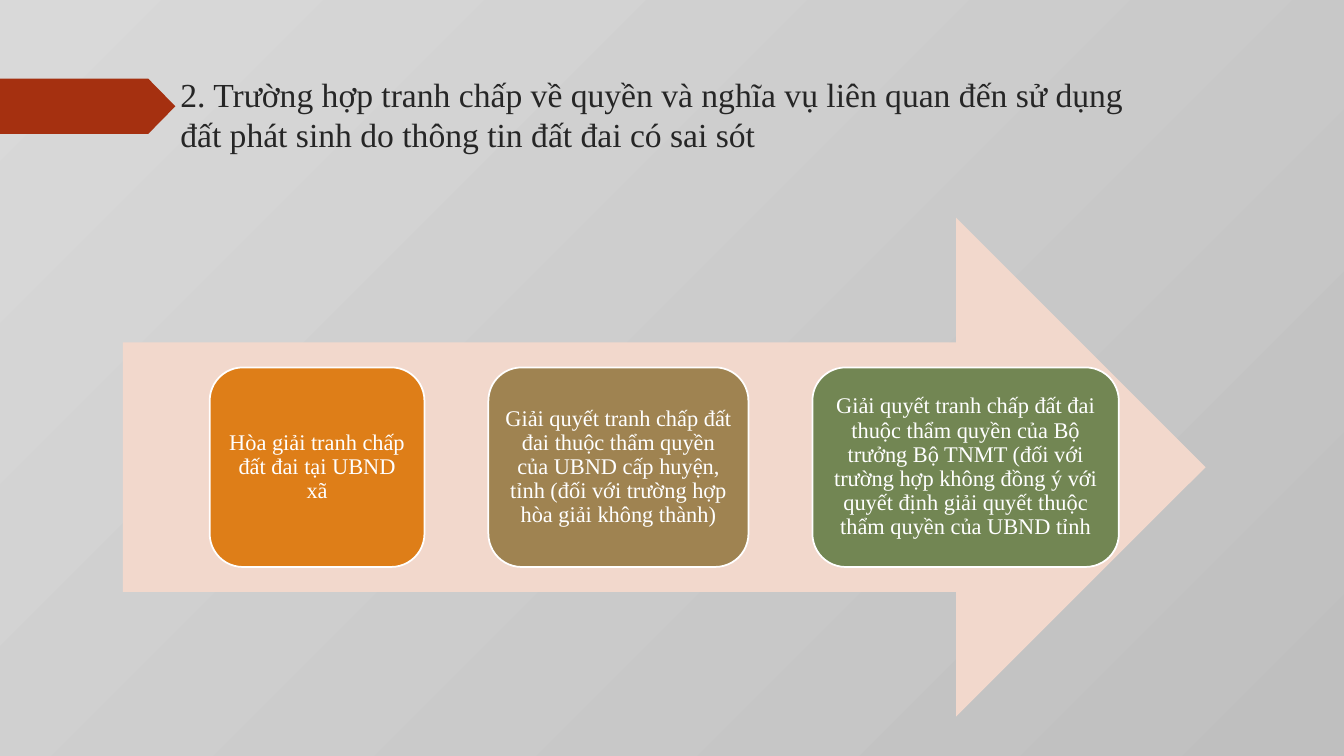
from dataclasses import dataclass

from pptx import Presentation
from pptx.dml.color import RGBColor
from pptx.enum.shapes import MSO_SHAPE
from pptx.enum.text import MSO_ANCHOR, PP_ALIGN
from pptx.util import Inches, Pt

# Content: heading, then steps as (text, fill, width in % of the slide)
HEADING = ("2. Trường hợp tranh chấp về quyền và nghĩa vụ liên quan đến sử dụng "
           "đất phát sinh do thông tin đất đai có sai sót")
STEPS = [
    ("Hòa giải tranh chấp đất đai tại UBND xã", "DE7E18", 15.98),
    ("Giải quyết tranh chấp đất đai thuộc thẩm quyền của UBND cấp huyện, tỉnh "
     "(đối với trường hợp hòa giải không thành)", "9F8351", 19.35),
    ("Giải quyết tranh chấp đất đai thuộc thẩm quyền của Bộ trưởng Bộ TNMT "
     "(đối với trường hợp không đồng ý với quyết định giải quyết thuộc thẩm quyền "
     "của UBND tỉnh", "728653", 22.8),
]


@dataclass(frozen=True)
class Theme:
    font: str = "Times New Roman"
    heading_size: int = 24
    step_size: int = 16
    heading: str = "262626"
    white: str = "FFFFFF"
    flag: str = "A53010"
    arrow: str = "F2D8CC"
    background: tuple = ("D9D9D9", "BFBFBF")


THEME = Theme()

# Layout: left, top, width, height in % of the slide
FLAG = (0, 10.4, 13.05, 7.33)
HEADING_BOX = (12.68, 9.07, 71.93, 18.67)
ARROW = (9.15, 28.8, 80.55, 66)
STEP_GAP = 4.76
STEP_SHARE = 0.4  # step height as a share of the arrow height

prs = Presentation()
prs.slide_width, prs.slide_height = Inches(13.33), Inches(7.5)
slide = prs.slides.add_slide(prs.slide_layouts[6])


def place(left, top, width, height):
    across, down = prs.slide_width / 100, prs.slide_height / 100
    return [round(v) for v in (left * across, top * down, width * across, height * down)]


def add_block(kind, box, fill):
    block = slide.shapes.add_shape(kind, *place(*box))
    block.shadow.inherit = False
    block.fill.solid()
    block.fill.fore_color.rgb = RGBColor.from_string(fill)
    block.line.fill.background()
    return block


def write(frame, text, size, color):
    frame.word_wrap = True
    paragraph = frame.paragraphs[0]
    paragraph.text = text
    paragraph.font.name = THEME.font
    paragraph.font.size = Pt(size)
    paragraph.font.color.rgb = RGBColor.from_string(color)
    return paragraph


# Background
backdrop = slide.background.fill
backdrop.gradient()
backdrop.gradient_angle = 315
for stop, color in zip(backdrop.gradient_stops, THEME.background):
    stop.color.rgb = RGBColor.from_string(color)

# Flag and heading
flag = add_block(MSO_SHAPE.PENTAGON, FLAG, THEME.flag)
flag.adjustments[0] = 0.49
heading = slide.shapes.add_textbox(*place(*HEADING_BOX))
write(heading.text_frame, HEADING, THEME.heading_size, THEME.heading).alignment = PP_ALIGN.LEFT

# Arrow
add_block(MSO_SHAPE.RIGHT_ARROW, ARROW, THEME.arrow)

# Steps, centred on the arrow
arrow_left, arrow_top, arrow_width, arrow_height = ARROW
row_width = sum(width for _, _, width in STEPS) + STEP_GAP * (len(STEPS) - 1)
step_left = arrow_left + (arrow_width - row_width) / 2
step_height = arrow_height * STEP_SHARE
step_top = arrow_top + (arrow_height - step_height) / 2
for text, fill, width in STEPS:
    step = add_block(MSO_SHAPE.ROUNDED_RECTANGLE,
                     (step_left, step_top, width, step_height), fill)
    step.line.color.rgb = RGBColor.from_string(THEME.white)
    step.line.width = Pt(1.25)
    frame = step.text_frame
    frame.vertical_anchor = MSO_ANCHOR.MIDDLE
    frame.margin_left = frame.margin_right = Inches(0.07)
    frame.margin_top = frame.margin_bottom = Inches(0.07)
    paragraph = write(frame, text, THEME.step_size, THEME.white)
    paragraph.alignment = PP_ALIGN.CENTER
    paragraph.line_spacing = 0.9
    step_left += width + STEP_GAP

prs.save("out.pptx")
